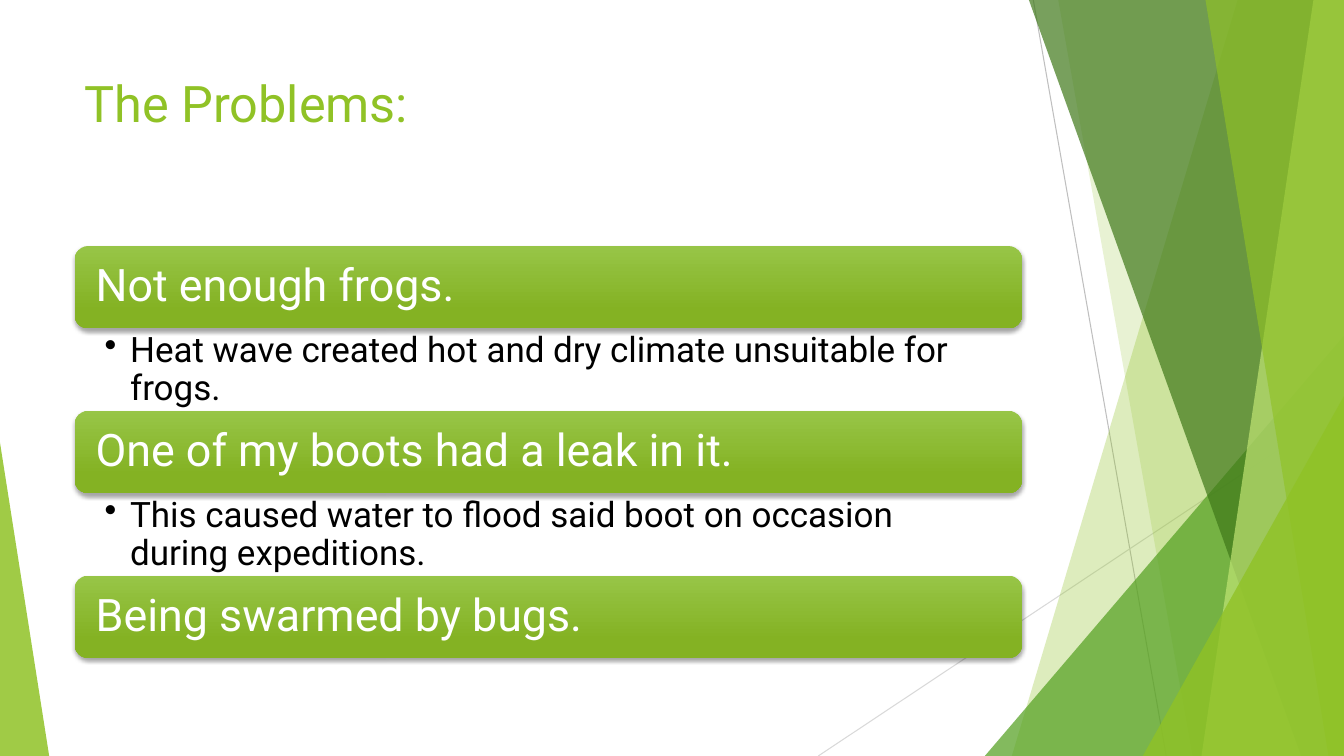
from dataclasses import dataclass

from lxml.etree import SubElement
from pptx import Presentation
from pptx.dml.color import RGBColor
from pptx.enum.shapes import MSO_CONNECTOR as Connector, MSO_SHAPE as Shape
from pptx.enum.text import MSO_ANCHOR as Anchor, PP_ALIGN as Align
from pptx.oxml.ns import qn
from pptx.util import Cm, Pt


@dataclass(frozen=True)
class Theme:
    font: str = "Roboto"
    title_size: int = 36
    problem_size: int = 32
    detail_size: int = 25
    green: str = "90C226"
    leaf: str = "54A021"
    forest: str = "3F7819"
    lime: str = "C0E474"
    bar_top: str = "97C547"
    bar_bottom: str = "84B223"
    white: str = "FFFFFF"
    black: str = "000000"
    gray: str = "BFBFBF"
    pale_gray: str = "D9D9D9"


THEME = Theme()
WIDTH, HEIGHT = 33.87, 19.05

TITLE = "The Problems:"
PROBLEMS = [
    ("Not enough frogs.",
     "Heat wave created hot and dry climate unsuitable for frogs."),
    ("One of my boots had a leak in it.",
     "This caused water to flood said boot on occasion during expeditions."),
    ("Being swarmed by bugs.", None),
]


def rgb(color):
    return RGBColor.from_string(color)


def add_effects(shape):
    return SubElement(shape._element.spPr, qn("a:effectLst"))


def paint(shape, color, opacity):
    """Give a flat, see-through fill with no outline or shadow."""
    shape.fill.solid()
    shape.fill.fore_color.rgb = rgb(color)
    fill = shape._element.spPr.find(qn("a:solidFill"))
    SubElement(fill[0], qn("a:alpha"), val=str(opacity * 1000))
    shape.line.fill.background()
    shape.shadow.inherit = False


def add_ray(page, start, end, color):
    ray = page.shapes.add_connector(
        Connector.STRAIGHT, *(Cm(value) for value in start + end))
    ray.line.color.rgb = rgb(color)
    ray.line.width = Pt(0.75)
    add_effects(ray)


def add_band(page, top_left, bottom_left, color, opacity):
    """Fill from a slanted edge to the right side of the page."""
    corners = [(WIDTH, 0), (WIDTH, HEIGHT), (bottom_left, HEIGHT)]
    outline = page.shapes.build_freeform(Cm(top_left), 0)
    outline.add_line_segments([(Cm(x), Cm(y)) for x, y in corners])
    paint(outline.convert_to_shape(), color, opacity)


def add_wedge(page, left, top, right, apex, color, opacity):
    """Stand a triangle on the bottom edge; apex is 0 (left) or 1 (right)."""
    wedge = page.shapes.add_shape(
        Shape.ISOSCELES_TRIANGLE,
        Cm(left), Cm(top), Cm(right - left), Cm(HEIGHT - top))
    wedge.adjustments[0] = apex
    paint(wedge, color, opacity)


def add_backdrop(page):
    add_ray(page, (26.04, 0), (29.39, HEIGHT), THEME.gray)
    add_ray(page, (WIDTH, 10.24), (20.62, HEIGHT), THEME.pale_gray)
    add_band(page, 31.19, 25.5, THEME.green, 30)
    add_band(page, 26.67, 30.05, THEME.green, 20)
    add_wedge(page, 24.82, 8.46, WIDTH, 1, THEME.leaf, 72)
    add_band(page, 25.93, 32.79, THEME.forest, 70)
    add_band(page, 33.1, 30.28, THEME.lime, 70)
    add_band(page, 30.38, 33.48, THEME.green, 65)
    add_wedge(page, 28.8, 9.98, WIDTH, 1, THEME.green, 80)
    add_wedge(page, 0, 11.15, 1.24, 0, THEME.green, 85)


def write(shape, text, size, color, spacing=1.0, **frame_format):
    frame = shape.text_frame
    frame.word_wrap = True
    for name, value in frame_format.items():
        setattr(frame, name, value)
    para = frame.paragraphs[0]
    para.alignment = Align.LEFT
    para.line_spacing = spacing
    span = para.add_run()
    span.text = text
    for name, value in {"name": THEME.font, "size": Pt(size)}.items():
        setattr(span.font, name, value)
    span.font.color.rgb = rgb(color)
    return para


def add_title(page, left, top, width, height):
    box = page.shapes.add_textbox(Cm(left), Cm(top), Cm(width), Cm(height))
    write(box, TITLE, THEME.title_size, THEME.green)


def add_problem(page, text, left, top, width, height):
    bar = page.shapes.add_shape(
        Shape.ROUNDED_RECTANGLE, Cm(left), Cm(top), Cm(width), Cm(height))
    bar.fill.gradient()
    bar.fill.gradient_angle = 270
    stops = [(0, THEME.bar_top), (0.78, THEME.bar_bottom)]
    for stop, (position, color) in zip(bar.fill.gradient_stops, stops):
        stop.position = position
        stop.color.rgb = rgb(color)
    bar.line.fill.background()
    shadow = SubElement(
        add_effects(bar), qn("a:outerShdw"), blurRad=str(Pt(3)),
        dist=str(Pt(2)), dir="5400000", algn="ctr", rotWithShape="0")
    shade = SubElement(shadow, qn("a:srgbClr"), val=THEME.black)
    SubElement(shade, qn("a:alpha"), val="35000")
    write(bar, text, THEME.problem_size, THEME.white, 0.9,
          vertical_anchor=Anchor.MIDDLE,
          margin_left=Cm(0.43), margin_right=Cm(0.43))


def add_detail(page, text, left, top, width, height):
    box = page.shapes.add_textbox(Cm(left), Cm(top), Cm(width), Cm(height))
    para = write(box, text, THEME.detail_size, THEME.black, 0.9,
                 margin_left=Cm(0.76), margin_right=Cm(0.64),
                 margin_top=Cm(0.1), margin_bottom=Cm(0.1))
    settings = para._p.get_or_add_pPr()
    settings.set("marL", str(Cm(0.64)))
    settings.set("indent", str(-Cm(0.64)))
    SubElement(settings, qn("a:buChar"), char="•")


def add_problem_list(page, left, top, width, height):
    """Stack bars and details in equal rows that fill the height."""
    row = height / (2 * len(PROBLEMS) - 1)
    for index, (problem, detail) in enumerate(PROBLEMS):
        bar_top = top + 2 * index * row
        add_problem(page, problem, left, bar_top, width, row)
        if detail:
            add_detail(page, detail, left, bar_top + row, width, row)


def main():
    deck = Presentation()
    deck.slide_width, deck.slide_height = Cm(WIDTH), Cm(HEIGHT)
    page = deck.slides.add_slide(deck.slide_layouts[6])
    add_backdrop(page)
    add_title(page, 1.88, 1.7, 23.88, 3.66)
    add_problem_list(page, 1.88, 6.2, 23.88, 10.38)
    deck.save("out.pptx")


if __name__ == "__main__":
    main()
